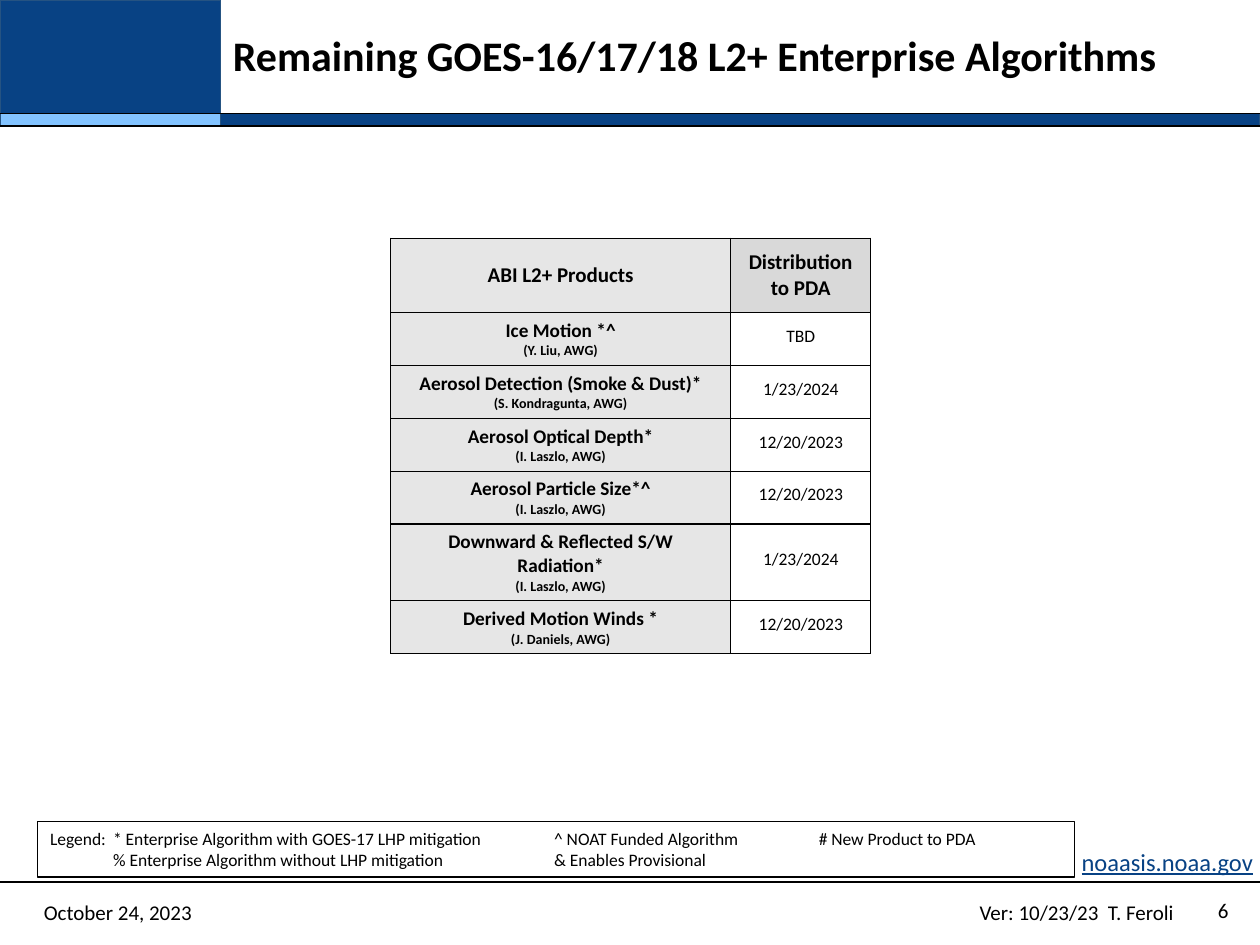
import pptx
import pptx.dml.color
import pptx.enum.shapes
import pptx.enum.text
import pptx.oxml
import pptx.oxml.ns
import pptx.util
from lxml import etree
from pptx.util import Inches

FONT = "Calibri"
COLORS = {
    "navy": "084284", "sky": "82C3FF", "edge": "255382", "black": "000000",
    "white": "FFFFFF", "label": "E6E6E6", "header": "D9D9D9",
}
ALIGN = pptx.enum.text.PP_ALIGN
ANCHOR = pptx.enum.text.MSO_ANCHOR
CELL_INSETS = (0.1, 0.05, 0.1, 0.05)
DATE_INSETS = (0.01, 0.01, 0.01, 0.05)
LEGEND_TABS = (0.5, 4.0, 6.1)

PRODUCTS = [
    ("Ice Motion *^", "(Y. Liu, AWG)", "TBD"),
    ("Aerosol Detection (Smoke & Dust)*", "(S. Kondragunta, AWG)", "1/23/2024"),
    ("Aerosol Optical Depth*", "(I. Laszlo, AWG)", "12/20/2023"),
    ("Aerosol Particle Size*^", "(I. Laszlo, AWG)", "12/20/2023"),
    ("Downward & Reflected S/W Radiation*", "(I. Laszlo, AWG)", "1/23/2024"),
    ("Derived Motion Winds *", "(J. Daniels, AWG)", "12/20/2023"),
]
LEGEND = [
    "Legend:\t* Enterprise Algorithm with GOES-17 LHP mitigation"
    "\t^ NOAT Funded Algorithm\t# New Product to PDA",
    "\t% Enterprise Algorithm without LHP mitigation\t& Enables Provisional",
]


def rgb(name):
    return pptx.dml.color.RGBColor.from_string(COLORS[name])


def style(p, size, bold=False, color="black", align=ALIGN.LEFT):
    p.alignment = align
    for r in p.runs:
        r.font.name = FONT
        r.font.size = pptx.util.Pt(size)
        r.font.bold = bold
        r.font.color.rgb = rgb(color)


def set_insets(target, insets):
    (target.margin_left, target.margin_top,
     target.margin_right, target.margin_bottom) = map(Inches, insets)


def add_rect(s, box, fill=None, line="edge"):
    sp = s.shapes.add_shape(pptx.enum.shapes.MSO_SHAPE.RECTANGLE, *map(Inches, box))
    sp.shadow.inherit = False
    if fill:
        sp.fill.solid()
        sp.fill.fore_color.rgb = rgb(fill)
    else:
        sp.fill.background()
    sp.line.color.rgb = rgb(line)
    sp.line.width = pptx.util.Pt(0.75)
    return sp


def add_rule(s, y):
    line = s.shapes.add_connector(
        pptx.enum.shapes.MSO_CONNECTOR.STRAIGHT,
        Inches(0), Inches(y), Inches(10), Inches(y))
    line.line.color.rgb = rgb("black")
    line.line.width = pptx.util.Pt(1)
    etree.SubElement(line._element.spPr, pptx.oxml.ns.qn("a:effectLst"))


def add_text(s, box, text, size, anchor=ANCHOR.TOP, insets=CELL_INSETS, **look):
    tf = s.shapes.add_textbox(*map(Inches, box)).text_frame
    tf.word_wrap = True
    tf.vertical_anchor = anchor
    set_insets(tf, insets)
    tf.text = text
    style(tf.paragraphs[0], size, **look)
    return tf.paragraphs[0]


def add_legend(s, box):
    tf = add_rect(s, box, line="black").text_frame
    tf.word_wrap = True
    tf.vertical_anchor = ANCHOR.TOP
    tf.text = "\n".join(LEGEND)
    for p in tf.paragraphs:
        tabs = etree.SubElement(p._p.get_or_add_pPr(), pptx.oxml.ns.qn("a:tabLst"))
        for stop in LEGEND_TABS:
            etree.SubElement(tabs, pptx.oxml.ns.qn("a:tab"),
                             pos=str(Inches(stop)), algn="l")
        style(p, 10)


def add_borders(cell):
    tcPr = cell._tc.get_or_add_tcPr()
    for side in ("lnL", "lnR", "lnT", "lnB"):
        tcPr.append(pptx.oxml.parse_xml(
            f'<a:{side} {pptx.oxml.ns.nsdecls("a")} w="9525"><a:solidFill>'
            f'<a:srgbClr val="{COLORS["black"]}"/></a:solidFill></a:{side}>'))


def fill_cell(cell, lines, fill, insets=CELL_INSETS, bold=True):
    """Write (text, size) lines, one paragraph each."""
    add_borders(cell)
    cell.fill.solid()
    cell.fill.fore_color.rgb = rgb(fill)
    cell.vertical_anchor = ANCHOR.MIDDLE
    set_insets(cell, insets)
    cell.text_frame.text = "\n".join(text for text, _ in lines)
    for p, (_, size) in zip(cell.text_frame.paragraphs, lines):
        style(p, size, bold, align=ALIGN.CENTER)


def add_products(s, box):
    table = s.shapes.add_table(len(PRODUCTS) + 1, 2, *map(Inches, box)).table
    table.horz_banding = False
    for column, width in zip(table.columns, (2.7, 1.11)):
        column.width = Inches(width)
    for row, height in zip(table.rows, [0.59] + [0.42] * 4 + [0.61, 0.42]):
        row.height = Inches(height)
    fill_cell(table.cell(0, 0), [("ABI L2+ Products", 12)], "label")
    fill_cell(table.cell(0, 1), [("Distribution to PDA", 12)], "header")
    for i, (product, lead, date) in enumerate(PRODUCTS, 1):
        fill_cell(table.cell(i, 0), [(product, 11), (lead, 8)], "label")
        fill_cell(table.cell(i, 1), [(date, 10)], "white", DATE_INSETS, False)


def main():
    prs = pptx.Presentation()
    prs.slide_width, prs.slide_height = Inches(10), Inches(7.5)
    s = prs.slides.add_slide(prs.slide_layouts[6])

    # Header band and rules
    add_rect(s, (0, 0, 1.75, 0.9), "navy")
    add_rect(s, (1.75, 0.9, 8.25, 0.1), "navy")
    add_rect(s, (0, 0.9, 1.75, 0.1), "sky")
    for y in (1, 0.9, 7):
        add_rule(s, y)
    title = add_text(s, (1.75, 0.01, 8.25, 0.9),
                     "Remaining GOES-16/17/18 L2+ Enterprise Algorithms", 24,
                     ANCHOR.MIDDLE, bold=True)
    title.line_spacing = 0.9

    # Footer
    add_text(s, (0.25, 7.04, 1.63, 0.4), "October 24, 2023", 12, ANCHOR.MIDDLE)
    add_text(s, (7.32, 7.09, 2.45, 0.3), "Ver: 10/23/23  T. Feroli", 12,
             align=ALIGN.CENTER)

    # Legend and product table
    add_legend(s, (0.3, 6.52, 8.23, 0.44))
    add_products(s, (3.1, 1.89, 3.81, 3.3))

    # Web address and slide number
    site = add_text(s, (8.53, 6.72, 1.47, 0.24), "noaasis.noaa.gov", 14,
                    insets=(0, 0, 0, 0), color="navy", align=ALIGN.CENTER)
    site.runs[0].font.underline = True
    add_text(s, (8.75, 7, 1, 0.5), "6", 12, ANCHOR.MIDDLE, (0, 0, 0, 0.05),
             align=ALIGN.RIGHT)

    prs.save("out.pptx")


if __name__ == "__main__":
    main()
